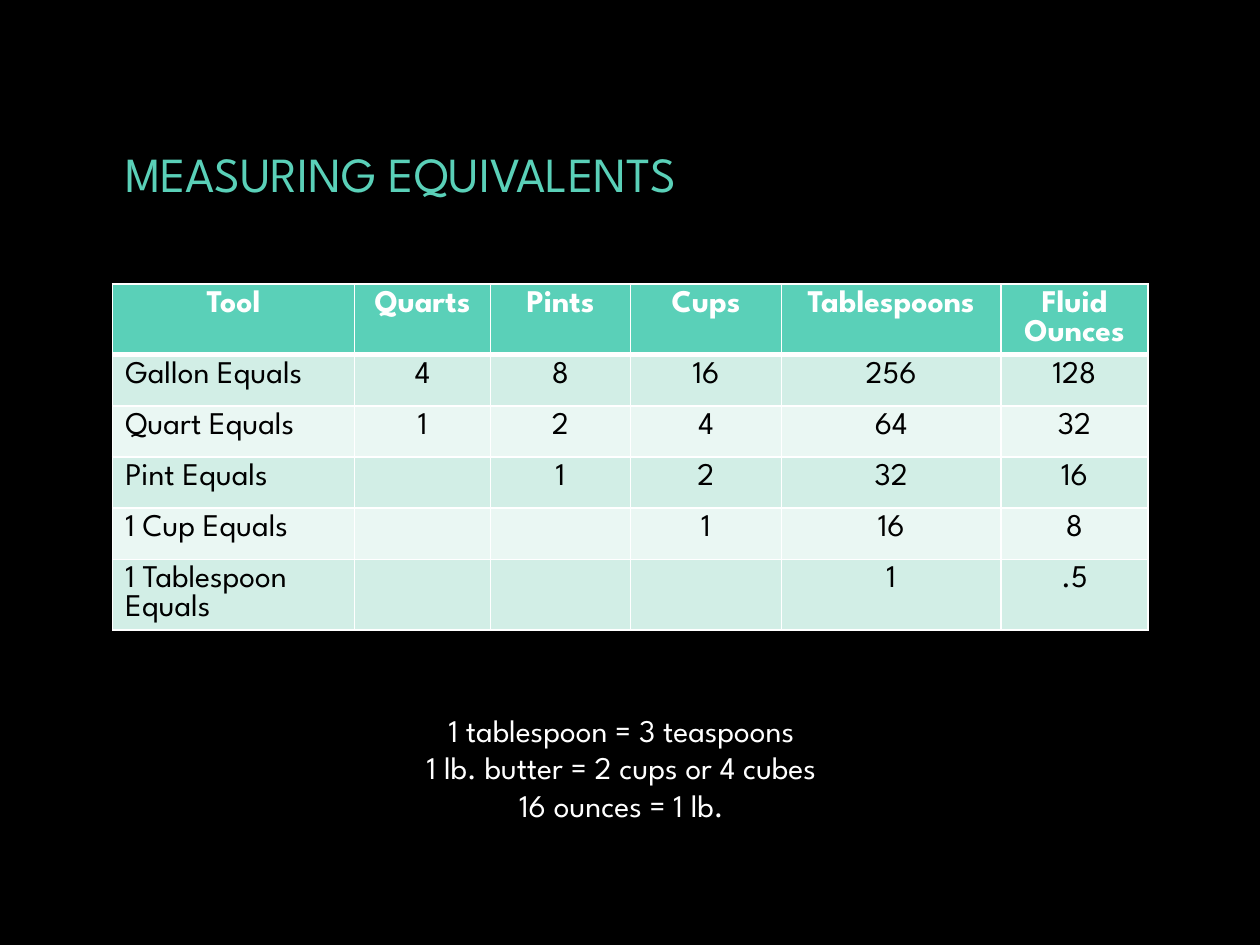
from dataclasses import dataclass

from lxml import etree
from pptx import Presentation
from pptx.dml.color import RGBColor
from pptx.enum import text
from pptx.oxml import ns
from pptx.util import Pt


@dataclass(frozen=True)
class Theme:
    font: str = "League Spartan"
    background: str = "000000"
    accent: str = "5AD0B8"
    bands: tuple = ("D2EEE6", "EAF7F3")
    light: str = "FFFFFF"
    dark: str = "000000"
    title_size: int = 28
    body_size: int = 18
    cell_line: float = 16.6


THEME = Theme()
LEFT = 64.4
COLUMN_WIDTHS = (138.2, 77.75, 79.9, 86.4, 125.3, 84.2)
ROW_HEIGHT = 29.25
HEADER = ("Tool", "Quarts", "Pints", "Cups", "Tablespoons", "Fluid Ounces")
EQUIVALENTS = (
    ("Gallon Equals", "4", "8", "16", "256", "128"),
    ("Quart Equals", "1", "2", "4", "64", "32"),
    ("Pint Equals", "", "1", "2", "32", "16"),
    ("1 Cup Equals", "", "", "1", "16", "8"),
    ("1 Tablespoon Equals", "", "", "", "1", ".5"),
)
NOTES = (
    "1 tablespoon = 3 teaspoons",
    "1 lb. butter = 2 cups or 4 cubes",
    "16 ounces = 1 lb.",
)


def format_text(tf, size, color, align, bold=False):
    for p in tf.paragraphs:
        p.alignment = align
        for r in p.runs:
            r.font.name = THEME.font
            r.font.size = Pt(size)
            r.font.bold = bold
            r.font.color.rgb = RGBColor.from_string(color)


def add_text(slide, box, lines, size, color, align, anchor):
    sp = slide.shapes.add_textbox(*map(Pt, box))
    tf = sp.text_frame
    tf.word_wrap = True
    tf.vertical_anchor = anchor
    tf.text = "\n".join(lines)
    format_text(tf, size, color, align)
    return tf


def set_borders(cell, bottom):
    """Draw white cell edges; they must precede the fill in the cell XML."""
    tc_pr = cell._tc.get_or_add_tcPr()
    widths = {"a:lnL": 1, "a:lnR": 1, "a:lnT": 1, "a:lnB": bottom}
    for i, (tag, width) in enumerate(widths.items()):
        ln = etree.Element(ns.qn(tag), w=str(Pt(width)))
        fill = etree.SubElement(ln, ns.qn("a:solidFill"))
        etree.SubElement(fill, ns.qn("a:srgbClr"), val=THEME.light)
        tc_pr.insert(i, ln)


def fill_cell(cell, value, fill, color, align, bold, bottom):
    tf = cell.text_frame
    tf.text = value
    format_text(tf, THEME.body_size, color, align, bold)
    tf.paragraphs[0].line_spacing = Pt(THEME.cell_line)
    cell.fill.solid()
    cell.fill.fore_color.rgb = RGBColor.from_string(fill)
    set_borders(cell, bottom)


def add_equivalents_table(slide):
    rows = (HEADER, *EQUIVALENTS)
    box = (LEFT, 162.25, sum(COLUMN_WIDTHS), ROW_HEIGHT * len(rows))
    table = slide.shapes.add_table(len(rows), len(HEADER), *map(Pt, box)).table
    for column, width in zip(table.columns, COLUMN_WIDTHS):
        column.width = Pt(width)
    for i, row in enumerate(rows):
        table.rows[i].height = Pt(ROW_HEIGHT)
        header = i == 0
        fill = THEME.accent if header else THEME.bands[(i - 1) % 2]
        color = THEME.light if header else THEME.dark
        for j, value in enumerate(row):
            centered = header or j > 0
            align = text.PP_ALIGN.CENTER if centered else text.PP_ALIGN.LEFT
            bottom = 3 if header else 1
            fill_cell(table.cell(i, j), value, fill, color, align, header, bottom)


def main():
    prs = Presentation()
    prs.slide_width, prs.slide_height = Pt(720), Pt(540)
    slide = prs.slides.add_slide(prs.slide_layouts[6])
    slide.background.fill.solid()
    slide.background.fill.fore_color.rgb = RGBColor.from_string(THEME.background)

    add_text(slide, (LEFT, 47, 591, 103.5), ["MEASURING EQUIVALENTS"],
             THEME.title_size, THEME.accent, text.PP_ALIGN.LEFT,
             text.MSO_ANCHOR.MIDDLE)
    add_equivalents_table(slide)
    notes = add_text(slide, (213.4, 402.5, 283.5, 72.7), NOTES, THEME.body_size,
                     THEME.light, text.PP_ALIGN.CENTER, text.MSO_ANCHOR.TOP)
    notes.auto_size = text.MSO_AUTO_SIZE.SHAPE_TO_FIT_TEXT

    prs.save("out.pptx")


if __name__ == "__main__":
    main()
